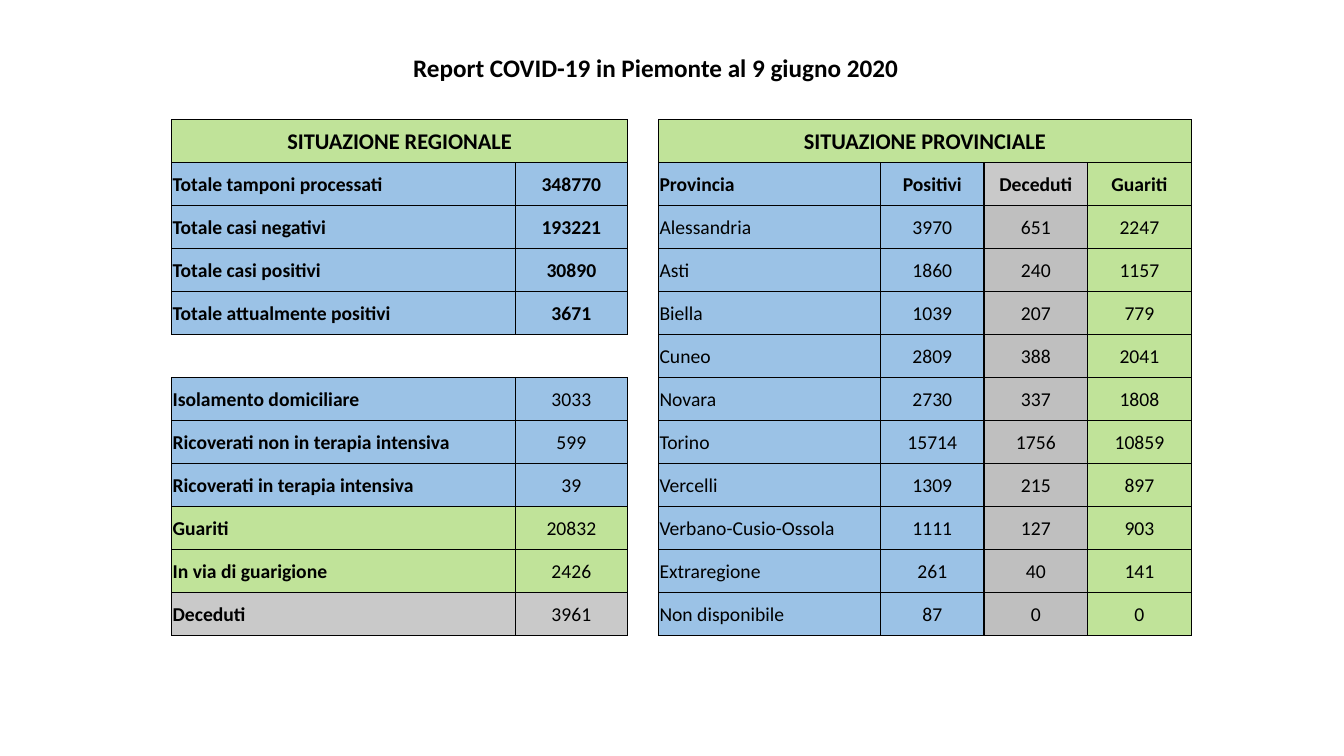
from pptx import Presentation
from pptx.dml.color import RGBColor
from pptx.enum.text import MSO_ANCHOR, MSO_AUTO_SIZE, PP_ALIGN
from pptx.oxml import parse_xml
from pptx.oxml.ns import nsdecls
from pptx.util import Cm, Pt

LEFT, CENTER = PP_ALIGN.LEFT, PP_ALIGN.CENTER
MIDDLE = MSO_ANCHOR.MIDDLE
FIT_SHAPE = MSO_AUTO_SIZE.SHAPE_TO_FIT_TEXT
FONT = "Calibri"
BLACK, WHITE = "000000", "FFFFFF"
BLUE, GREEN, GREY, LIGHT_GREY = "9BC2E6", "C0E399", "BFBFBF", "C9C9C9"

REGION = [
    ("SITUAZIONE REGIONALE", ""),
    ("Totale tamponi processati", "348770"),
    ("Totale casi negativi", "193221"),
    ("Totale casi positivi", "30890"),
    ("Totale attualmente positivi", "3671"),
    ("", ""),
    ("Isolamento domiciliare", "3033"),
    ("Ricoverati non in terapia intensiva", "599"),
    ("Ricoverati in terapia intensiva", "39"),
    ("Guariti", "20832"),
    ("In via di guarigione", "2426"),
    ("Deceduti", "3961"),
]
PROVINCES = [
    ("SITUAZIONE PROVINCIALE", "", "", ""),
    ("Provincia", "Positivi", "Deceduti", "Guariti"),
    ("Alessandria", "3970", "651", "2247"),
    ("Asti", "1860", "240", "1157"),
    ("Biella", "1039", "207", "779"),
    ("Cuneo", "2809", "388", "2041"),
    ("Novara", "2730", "337", "1808"),
    ("Torino", "15714", "1756", "10859"),
    ("Vercelli", "1309", "215", "897"),
    ("Verbano-Cusio-Ossola", "1111", "127", "903"),
    ("Extraregione", "261", "40", "141"),
    ("Non disponibile", "87", "0", "0"),
]
ROWS = [(*region, "", *province) for region, province in zip(REGION, PROVINCES)]
COL_WIDTHS = [8.66, 2.82, 0.79, 5.59, 2.61, 2.61, 2.61]
GAP_COL, GAP_ROW = 2, 5
REGION_BLOCKS = {0, 1, 5, 6, 9, 12}
PROVINCE_BLOCKS = {0, 1, 2, 12}


def rgb(color):
    """Turn a hex string into a colour."""
    return RGBColor.from_string(color)


def is_blank(row, col):
    """Tell whether a position lies outside both bordered blocks."""
    inside = 0 <= row < len(ROWS) and 0 <= col < len(COL_WIDTHS)
    return not inside or col == GAP_COL or (row == GAP_ROW and col < GAP_COL)


def fill_color(row, col):
    """Return the fill colour of a cell."""
    if is_blank(row, col):
        return WHITE
    if row == 0:
        return GREEN
    if col < GAP_COL:
        return BLUE if row < 9 else GREEN if row < 11 else LIGHT_GREY
    if col == 5:
        return LIGHT_GREY if row == 1 else GREY
    return GREEN if col == 6 else BLUE


def edge_widths(row, col):
    """Return the line width of each side of a cell, zero for no line."""
    blocks = REGION_BLOCKS if col < GAP_COL else PROVINCE_BLOCKS
    sides = {
        "L": (row, col - 1, 1),
        "R": (row, col + 1, 1),
        "T": (row - 1, col, 1 if row in blocks else 0.5),
        "B": (row + 1, col, 1 if row + 1 in blocks else 0.5),
    }
    blank = is_blank(row, col)
    return {side: 0 if blank and is_blank(r, c) else width
            for side, (r, c, width) in sides.items()}


class Report:
    """Hold the style and the current slide."""

    def __init__(self, prs):
        """Add a title-only slide."""
        self.font = FONT
        self.s = prs.slides.add_slide(prs.slide_layouts[5])

    def text(self, tf, text, size=14, bold=False, align=LEFT):
        """Set one formatted paragraph in a text frame."""
        p = tf.paragraphs[0]
        p.alignment = align
        r = p.add_run()
        r.text = text
        r.font.name = self.font
        r.font.size = Pt(size)
        r.font.bold = bold
        r.font.color.rgb = rgb(BLACK)

    def title(self, text, left, top, width, height):
        """Place and format the slide title."""
        sp = self.s.shapes.title
        sp.left, sp.top, sp.width, sp.height = map(Cm, (left, top, width, height))
        tf = sp.text_frame
        tf.word_wrap = True
        tf.auto_size = FIT_SHAPE
        self.text(tf, text, size=18, bold=True, align=CENTER)

    def border(self, cell, side, width):
        """Draw or clear one side of a cell."""
        paint = (f'<a:solidFill><a:srgbClr val="{BLACK}"/></a:solidFill>'
                 if width else "<a:noFill/>")
        cell._tc.get_or_add_tcPr().append(parse_xml(
            f'<a:ln{side} {nsdecls("a")} w="{Pt(width)}">{paint}</a:ln{side}>'))

    def cell(self, cell, row, col):
        """Fill, border and label one table cell."""
        cell.margin_left = cell.margin_right = cell.margin_top = Cm(0.02)
        cell.margin_bottom = 0
        cell.vertical_anchor = MIDDLE
        for side, width in edge_widths(row, col).items():
            self.border(cell, side, width)
        cell.fill.solid()
        cell.fill.fore_color.rgb = rgb(fill_color(row, col))
        text = ROWS[row][col]
        if text:
            bold = col == 0 or row < (5 if col < GAP_COL else 2)
            is_label = row > 0 and col in (0, GAP_COL + 1)
            self.text(cell.text_frame, text, size=14 if row else 16,
                      bold=bold, align=LEFT if is_label else CENTER)

    def table(self, left, top, height):
        """Build the table with the regional and provincial blocks."""
        table = self.s.shapes.add_table(
            len(ROWS), len(COL_WIDTHS), Cm(left), Cm(top),
            Cm(sum(COL_WIDTHS)), Cm(height)).table
        table.first_row = table.horz_banding = False
        for column, width in zip(table.columns, COL_WIDTHS):
            column.width = Cm(width)
        for row in range(len(ROWS)):
            for col in range(len(COL_WIDTHS)):
                self.cell(table.cell(row, col), row, col)
        for first, last in ((0, GAP_COL - 1), (GAP_COL + 1, len(COL_WIDTHS) - 1)):
            table.cell(0, first).merge(table.cell(0, last))


def main():
    """Build and save the report slide."""
    prs = Presentation()
    prs.slide_width, prs.slide_height = Cm(33.87), Cm(19.05)
    report = Report(prs)
    report.title("Report COVID-19 in Piemonte al 9 giugno 2020", 8.03, 1.19, 16.99, 1.02)
    report.table(4.33, 3.02, 13)
    prs.save("out.pptx")


if __name__ == "__main__":
    main()
